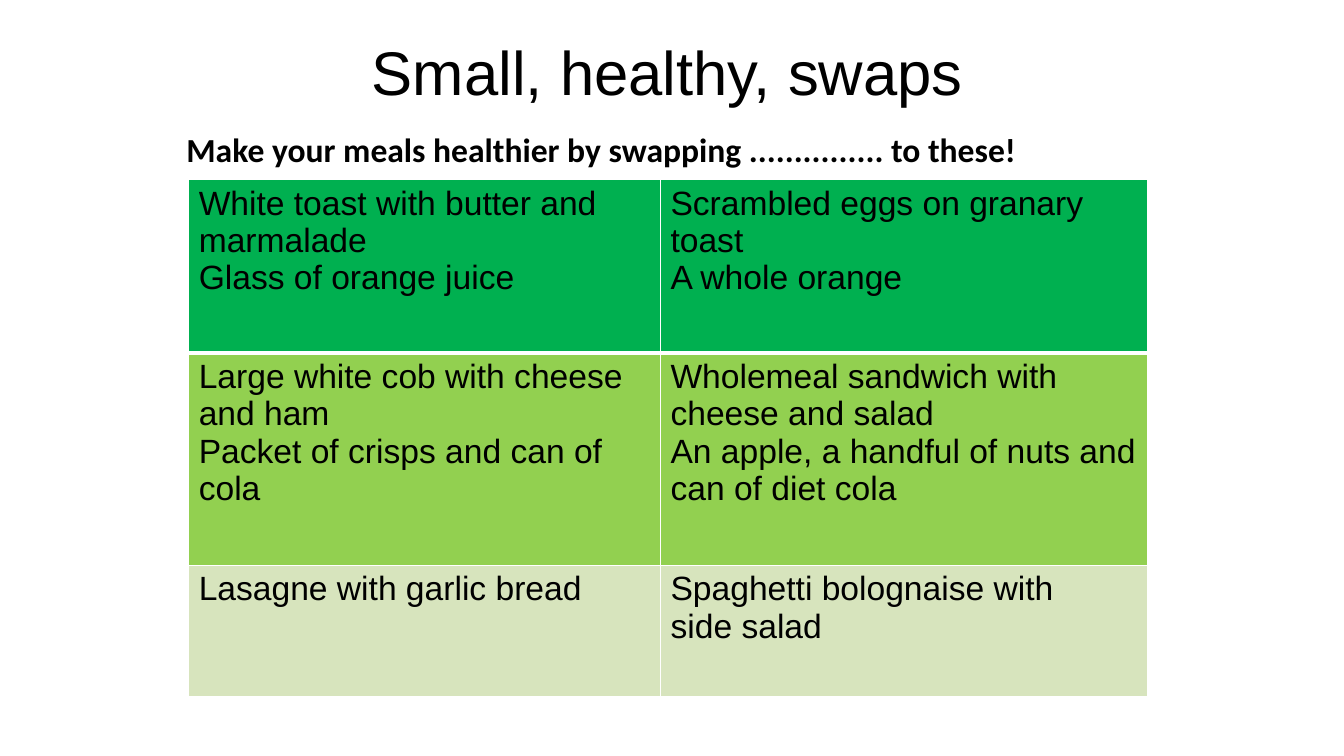
from lxml import etree
from pptx import Presentation
from pptx.dml.color import RGBColor
from pptx.enum import text
from pptx.oxml.ns import qn
from pptx.util import Pt

BLACK = RGBColor(0x00, 0x00, 0x00)
WHITE = RGBColor(0xFF, 0xFF, 0xFF)
GREEN = RGBColor(0x00, 0xB0, 0x50)
LIME = RGBColor(0x92, 0xD0, 0x50)
PALE = RGBColor(0xD7, 0xE4, 0xBD)

COL_WIDTHS = [337, 348]
# Row height, fill, and the lines of each cell
MEALS = [
    (123.8, GREEN, [
        ["White toast with butter and marmalade", "Glass of orange juice"],
        ["Scrambled eggs on granary toast", "A whole orange"]]),
    (151.9, LIME, [
        ["Large white cob with cheese and ham", "Packet of crisps and can of cola"],
        ["Wholemeal sandwich with cheese and salad",
         "An apple, a handful of nuts and can of diet cola"]]),
    (93.6, PALE, [
        ["Lasagne with garlic bread"],
        ["Spaghetti bolognaise with", "side salad"]]),
]


def write(tf, lines, size=24, font="Arial", bold=False, align=text.PP_ALIGN.LEFT):
    tf.word_wrap = True
    for i, line in enumerate(lines):
        p = tf.paragraphs[0] if i == 0 else tf.add_paragraph()
        p.alignment = align
        r = p.add_run()
        r.text = line
        r.font.size, r.font.name, r.font.bold = Pt(size), font, bold
        r.font.color.rgb = BLACK


def add_text(s, x, y, w, h, line, **fmt):
    tf = s.shapes.add_textbox(Pt(x), Pt(y), Pt(w), Pt(h)).text_frame
    write(tf, [line], **fmt)
    return tf


def set_borders(cell, **widths):
    """Draw white borders; widths maps L, R, T and B to points."""
    tcPr = cell._tc.get_or_add_tcPr()
    for i, (side, width) in enumerate(widths.items()):
        ln = etree.Element(qn(f"a:ln{side}"), w=str(Pt(width)))
        fill = etree.SubElement(ln, qn("a:solidFill"))
        etree.SubElement(fill, qn("a:srgbClr"), val=str(WHITE))
        tcPr.insert(i, ln)


def add_meal_table(s, x, y):
    height = sum(row[0] for row in MEALS)
    tbl = s.shapes.add_table(len(MEALS), len(COL_WIDTHS), Pt(x), Pt(y),
                             Pt(sum(COL_WIDTHS)), Pt(height)).table
    tbl.first_row = tbl.horz_banding = False
    for col, width in zip(tbl.columns, COL_WIDTHS):
        col.width = Pt(width)
    for i, (row_height, color, meals) in enumerate(MEALS):
        tbl.rows[i].height = Pt(row_height)
        for j, lines in enumerate(meals):
            cell = tbl.cell(i, j)
            cell.fill.solid()
            cell.fill.fore_color.rgb = color
            set_borders(cell, L=1, R=1, T=3 if i == 1 else 1, B=3 if i == 0 else 1)
            write(cell.text_frame, lines)


def main():
    prs = Presentation()
    prs.slide_width, prs.slide_height = Pt(960), Pt(540)
    s = prs.slides.add_slide(prs.slide_layouts[6])
    title = add_text(s, 206, 16, 542, 82, "Small, healthy, swaps", size=44,
                     align=text.PP_ALIGN.CENTER)
    title.margin_top = Pt(8)
    intro = add_text(s, 126, 88.6, 677, 36,
                     "Make your meals healthier by swapping ............... to these!",
                     font="Calibri", bold=True)
    intro.auto_size = text.MSO_AUTO_SIZE.SHAPE_TO_FIT_TEXT
    add_meal_table(s, 134.8, 128.3)
    prs.save("out.pptx")


if __name__ == "__main__":
    main()
